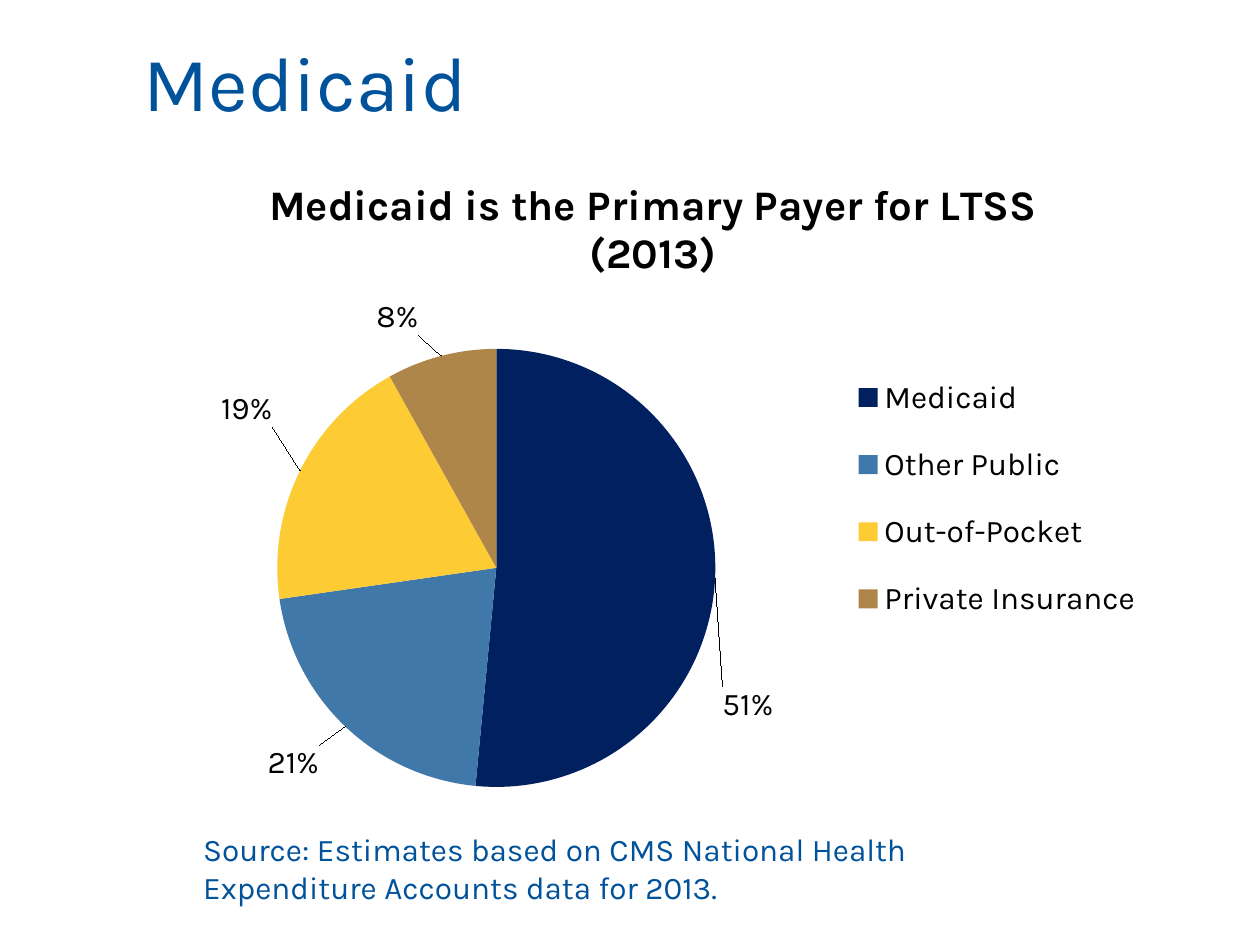
from dataclasses import dataclass

from pptx import Presentation
from pptx.chart.data import CategoryChartData
from pptx.dml.color import RGBColor
from pptx.enum.chart import XL_CHART_TYPE, XL_LABEL_POSITION, XL_LEGEND_POSITION
from pptx.enum.text import MSO_ANCHOR
from pptx.oxml import parse_xml
from pptx.oxml.ns import nsdecls
from pptx.util import Pt


@dataclass(frozen=True)
class Theme:
    font: str = "Karla"
    blue: RGBColor = RGBColor(0x00, 0x52, 0x9B)
    black: RGBColor = RGBColor(0, 0, 0)
    title_size: int = 44
    chart_title_size: int = 24
    body_size: int = 18


THEME = Theme()

# Category, share, slice colour, label offset as fractions of the chart
PAYERS = [
    ("Medicaid", 0.51, "002060", (0, 0.19)),
    ("Other Public", 0.21, "4178AA", (-0.02, 0.02)),
    ("Out-of-Pocket", 0.19, "FDCB34", (-0.02, -0.06)),
    ("Private Insurance", 0.08, "AF8649", (-0.02, -0.02)),
]


def style_font(font, size, color, bold=False):
    font.name = THEME.font
    font.size = Pt(size)
    font.bold = bold
    font.color.rgb = color


def add_text(slide, box, text, size, anchor=MSO_ANCHOR.TOP, line_spacing=None):
    tf = slide.shapes.add_textbox(*map(Pt, box)).text_frame
    tf.word_wrap = True
    tf.vertical_anchor = anchor
    tf.text = text
    p = tf.paragraphs[0]
    p.line_spacing = line_spacing
    style_font(p.runs[0].font, size, THEME.blue)


def set_layout(element, index, **values):
    """Give a chart part a manual layout, inserted as its child at index."""
    for old in element.xpath("./c:layout"):
        element.remove(old)
    parts = "".join(f'<c:{name} val="{value}"/>' for name, value in values.items())
    element.insert(index, parse_xml(
        f'<c:layout {nsdecls("c")}><c:manualLayout>{parts}</c:manualLayout></c:layout>'))


def add_payer_chart(slide, box):
    data = CategoryChartData(number_format="0%")
    data.categories = [name for name, *_ in PAYERS]
    data.add_series("Series 1", [share for _, share, *_ in PAYERS])
    chart = slide.shapes.add_chart(XL_CHART_TYPE.PIE, *map(Pt, box), data).chart
    style_font(chart.font, THEME.body_size, THEME.black)

    tf = chart.chart_title.text_frame
    tf.text = "Medicaid is the Primary Payer for LTSS (2013)"
    style_font(tf.paragraphs[0].runs[0].font, THEME.chart_title_size, THEME.black, bold=True)

    chart.has_legend = True
    chart.legend.position = XL_LEGEND_POSITION.RIGHT
    chart.legend.include_in_layout = False
    style_font(chart.legend.font, THEME.body_size, THEME.black)

    plot = chart.plots[0]
    plot.vary_by_categories = True
    series = plot.series[0]
    labels = series.data_labels
    labels.show_value = True
    labels.number_format = "0%"
    labels.number_format_is_linked = False
    labels.position = XL_LABEL_POSITION.OUTSIDE_END
    style_font(labels.font, THEME.body_size, THEME.black)
    for i, (_, _, color, _) in enumerate(PAYERS):
        point = series.points[i]
        point.format.fill.solid()
        point.format.fill.fore_color.rgb = RGBColor.from_string(color)
        point.data_label.position = XL_LABEL_POSITION.OUTSIDE_END

    root = chart.element
    for label, (_, _, _, (dx, dy)) in zip(root.xpath(".//c:dLbl"), PAYERS):
        set_layout(label, 1, x=dx, y=dy)
    set_layout(root.xpath(".//c:plotArea")[0], 0, layoutTarget="inner",
               xMode="edge", yMode="edge", x=0.14, y=0.3, w=0.42, h=0.66)
    set_layout(root.xpath(".//c:legend")[0], 1,
               xMode="edge", yMode="edge", x=0.68, y=0.3, w=0.3, h=0.45)


def main():
    prs = Presentation()
    prs.slide_width, prs.slide_height = Pt(720), Pt(540)
    slide = prs.slides.add_slide(prs.slide_layouts[6])
    add_text(slide, (75, 8.5, 596, 81.5), "Medicaid", THEME.title_size,
             MSO_ANCHOR.MIDDLE, 0.9)
    add_payer_chart(slide, (75, 85.5, 596, 379.5))
    add_text(slide, (109, 471, 443, 51),
             "Source: Estimates based on CMS National Health Expenditure Accounts data for 2013.",
             THEME.body_size)
    prs.save("out.pptx")


if __name__ == "__main__":
    main()
